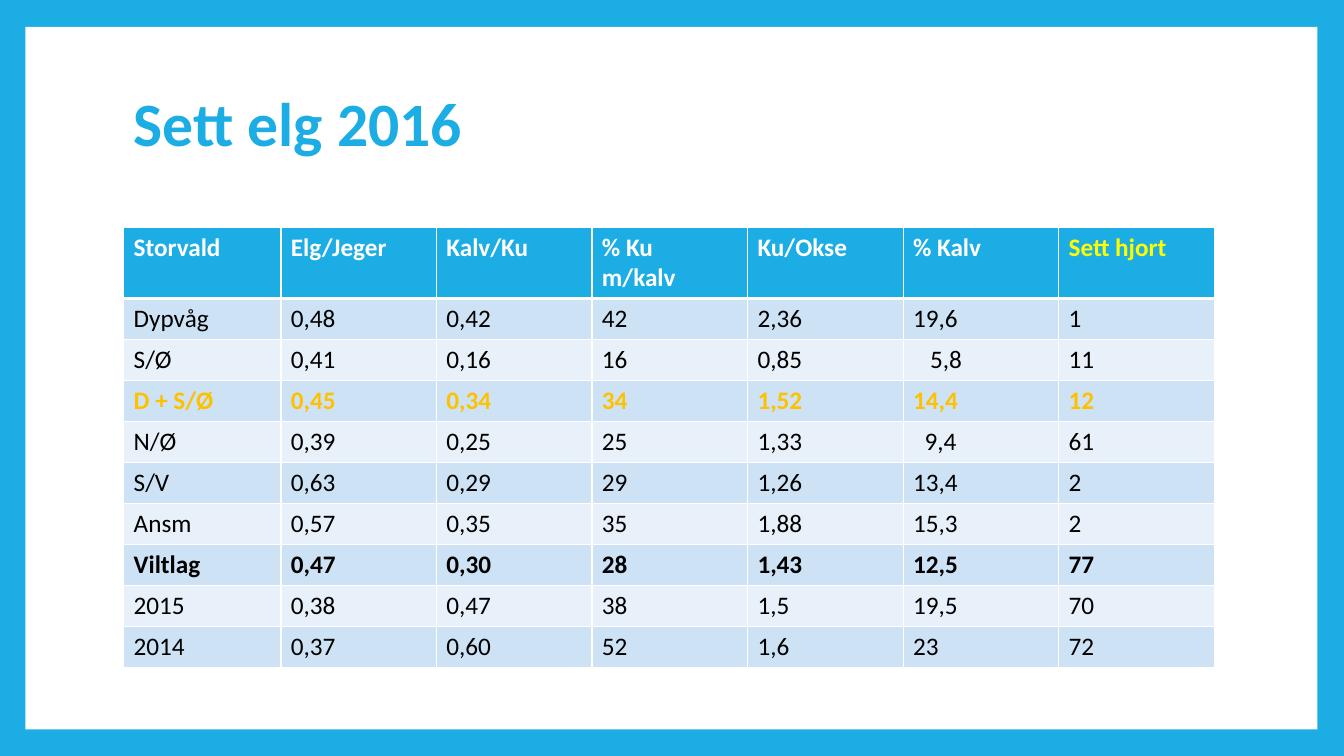
from lxml.etree import SubElement
from pptx import Presentation
from pptx.dml.color import RGBColor
from pptx.enum.shapes import MSO_SHAPE as Shape
from pptx.enum.text import MSO_ANCHOR as Anchor
from pptx.oxml.ns import qn
from pptx.util import Cm, Pt

BLUE = RGBColor(0x1C, 0xAD, 0xE4)
WHITE = RGBColor(0xFF, 0xFF, 0xFF)
BLACK = RGBColor(0x00, 0x00, 0x00)
YELLOW = RGBColor(0xFF, 0xFF, 0x00)
AMBER = RGBColor(0xFF, 0xC0, 0x00)
BAND_DARK = RGBColor(0xCD, 0xE3, 0xF5)
BAND_LIGHT = RGBColor(0xE8, 0xF1, 0xFA)
FONT = "Calibri"

HEADINGS = ["Storvald", "Elg/Jeger", "Kalv/Ku", "% Ku\nm/kalv", "Ku/Okse", "% Kalv", "Sett hjort"]
SIGHTINGS = [
    ["Dypvåg", "0,48", "0,42", "42", "2,36", "19,6", "1"],
    ["S/Ø", "0,41", "0,16", "16", "0,85", "5,8", "11"],
    ["D + S/Ø", "0,45", "0,34", "34", "1,52", "14,4", "12"],
    ["N/Ø", "0,39", "0,25", "25", "1,33", "9,4", "61"],
    ["S/V", "0,63", "0,29", "29", "1,26", "13,4", "2"],
    ["Ansm", "0,57", "0,35", "35", "1,88", "15,3", "2"],
    ["Viltlag", "0,47", "0,30", "28", "1,43", "12,5", "77"],
    ["2015", "0,38", "0,47", "38", "1,5", "19,5", "70"],
    ["2014", "0,37", "0,60", "52", "1,6", "23", "72"],
]
SUBTOTAL, TOTAL = "D + S/Ø", "Viltlag"
EXTRA_INDENT = {"5,8": Cm(0.43), "9,4": Cm(0.29)}


def style_text(frame, size, color, bold):
    """Format every run of a text frame."""
    for paragraph in frame.paragraphs:
        for run in paragraph.runs:
            run.font.name = FONT
            run.font.size = Pt(size)
            run.font.bold = bold
            run.font.color.rgb = color


def add_frame(slide, left, top, width, height):
    """Colour the background and lay the white panel behind the content."""
    slide.background.fill.solid()
    slide.background.fill.fore_color.rgb = BLUE
    panel = slide.shapes.add_shape(Shape.RECTANGLE, left, top, width, height)
    panel.shadow.inherit = False
    panel.fill.solid()
    panel.fill.fore_color.rgb = WHITE
    panel.line.fill.background()
    slide.shapes._spTree.insert(2, panel._element)


def place_title(slide, left, top, width, height):
    """Move and format the title placeholder."""
    title = slide.shapes.title
    title.left, title.top, title.width, title.height = left, top, width, height
    frame = title.text_frame
    frame.text = "Sett elg 2016"
    frame.word_wrap = True
    frame.vertical_anchor = Anchor.MIDDLE
    frame.paragraphs[0].alignment = 1
    frame.paragraphs[0].line_spacing = 0.9
    style_text(frame, 44, BLUE, True)


def set_borders(cell, top, bottom):
    """Draw white cell borders, with the given top and bottom widths in points."""
    properties = cell._tc.get_or_add_tcPr()
    for side, points in (("L", 1), ("R", 1), ("T", top), ("B", bottom)):
        border = SubElement(properties, qn(f"a:ln{side}"), w=str(Pt(points)))
        fill = SubElement(border, qn("a:solidFill"))
        SubElement(fill, qn("a:srgbClr"), val=str(WHITE))


def fill_cell(cell, text, background, color, bold):
    """Write and colour one table cell."""
    cell.fill.solid()
    cell.fill.fore_color.rgb = background
    cell.margin_left = Cm(0.25) + EXTRA_INDENT.get(text, 0)
    cell.text_frame.text = text
    style_text(cell.text_frame, 18, color, bold)


def add_sightings(slide, left, top, width, height):
    """Add the table of sightings, with a taller header and equal rows below."""
    row_count, column_count = len(SIGHTINGS) + 1, len(HEADINGS)
    table = slide.shapes.add_table(row_count, column_count, left, top, width, height).table
    header_height, name_width = Cm(1.78), Cm(3.96)
    for index, row in enumerate(table.rows):
        row.height = (height - header_height) // (row_count - 1) if index else header_height
    for index, column in enumerate(table.columns):
        column.width = (width - name_width) // (column_count - 1) if index else name_width

    for index, heading in enumerate(HEADINGS):
        cell = table.cell(0, index)
        set_borders(cell, 1, 3)
        fill_cell(cell, heading, BLUE, YELLOW if heading == "Sett hjort" else WHITE, True)
    for row, values in enumerate(SIGHTINGS, 1):
        area = values[0]
        band = BAND_DARK if row % 2 else BAND_LIGHT
        color = AMBER if area == SUBTOTAL else BLACK
        for column, value in enumerate(values):
            cell = table.cell(row, column)
            set_borders(cell, 3 if row == 1 else 1, 1)
            fill_cell(cell, value, band, color, area in (SUBTOTAL, TOTAL))


def main():
    """Build the slide and save it."""
    deck = Presentation()
    deck.slide_width, deck.slide_height = Cm(33.87), Cm(19.05)
    slide = deck.slides.add_slide(deck.slide_layouts[5])
    add_frame(slide, Cm(0.64), Cm(0.68), Cm(32.56), Cm(17.7))
    place_title(slide, Cm(3.12), Cm(1.32), Cm(27.43), Cm(3.76))
    add_sightings(slide, Cm(3.12), Cm(5.72), Cm(27.48), Cm(11.07))
    deck.save("out.pptx")


if __name__ == "__main__":
    main()
